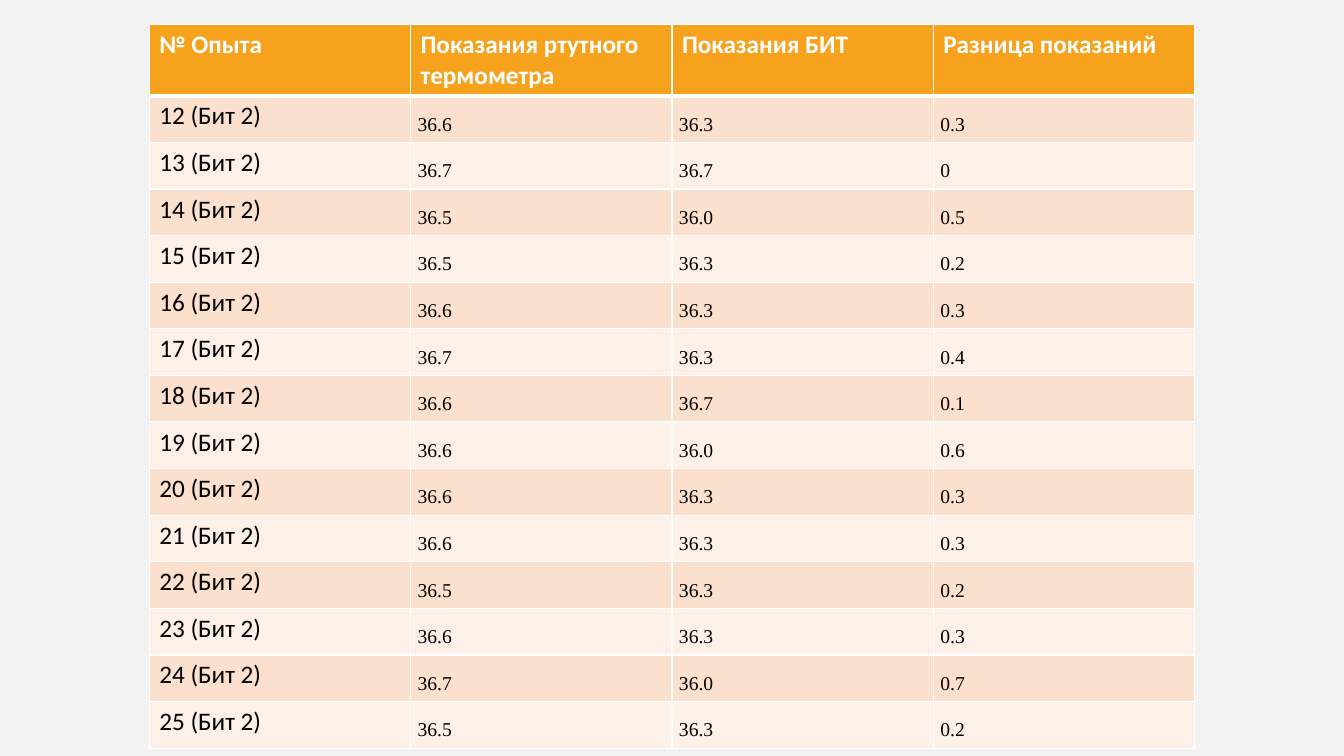
"""Build a slide with a table of thermometer readings."""
from lxml.etree import SubElement
from pptx import Presentation
from pptx.dml.color import RGBColor
from pptx.enum.text import PP_ALIGN
from pptx.oxml.ns import qn
from pptx.util import Inches, Pt

COLORS = {
    "back": "F2F2F2",
    "head": "F6A21D",
    "odd": "FBE0CD",
    "even": "FDF0E8",
    "line": "FFFFFF",
    "light": "FFFFFF",
    "dark": "000000",
}
HEADS = ["№ Опыта", "Показания ртутного термометра", "Показания БИТ", "Разница показаний"]
TESTS = [
    ("36.6", "36.3", "0.3"),
    ("36.7", "36.7", "0"),
    ("36.5", "36.0", "0.5"),
    ("36.5", "36.3", "0.2"),
    ("36.6", "36.3", "0.3"),
    ("36.7", "36.3", "0.4"),
    ("36.6", "36.7", "0.1"),
    ("36.6", "36.0", "0.6"),
    ("36.6", "36.3", "0.3"),
    ("36.6", "36.3", "0.3"),
    ("36.5", "36.3", "0.2"),
    ("36.6", "36.3", "0.3"),
    ("36.7", "36.0", "0.7"),
    ("36.5", "36.3", "0.2"),
]


def color(name):
    return RGBColor.from_string(COLORS[name])


def border(cell, side, width):
    line = SubElement(cell._tc.get_or_add_tcPr(), qn(f"a:ln{side}"), w=str(Pt(width)))
    fill = SubElement(line, qn("a:solidFill"))
    SubElement(fill, qn("a:srgbClr"), val=COLORS["line"])


deck = Presentation()
deck.slide_width = Inches(13.33)
deck.slide_height = Inches(7.5)
slide = deck.slides.add_slide(deck.slide_layouts[6])
slide.background.fill.solid()
slide.background.fill.fore_color.rgb = color("back")

rows = [HEADS] + [(f"{num} (Бит 2)", *test) for num, test in enumerate(TESTS, 12)]
frame = slide.shapes.add_table(
    len(rows), len(HEADS), Inches(1.48), Inches(0.24), Inches(10.37), Inches(7.02)
)
table = frame.table
for row in table.rows:
    row.height = Inches(0.41)
frame.height = Inches(7.02)

for r, texts in enumerate(rows):
    shade = "head" if r == 0 else "odd" if r % 2 else "even"
    for c, text in enumerate(texts):
        cell = table.cell(r, c)
        for side in "LRTB":
            if r != 1 or side != "T":
                border(cell, side, 3 if r == 0 and side == "B" else 1)
        cell.fill.solid()
        cell.fill.fore_color.rgb = color(shade)

        para = cell.text_frame.paragraphs[0]
        run = para.add_run()
        run.text = text
        font = run.font
        font.bold = r == 0
        font.color.rgb = color("dark" if r else "light")
        if r and c:
            cell.margin_left = cell.margin_right = Inches(0.07)
            cell.margin_top = cell.margin_bottom = Inches(0.07)
            para.alignment = PP_ALIGN.JUSTIFY
            para.line_spacing = 1.5
            font.name, font.size = "Times New Roman", Pt(14)
        else:
            font.name, font.size = "Calibri", Pt(18)

deck.save("out.pptx")
